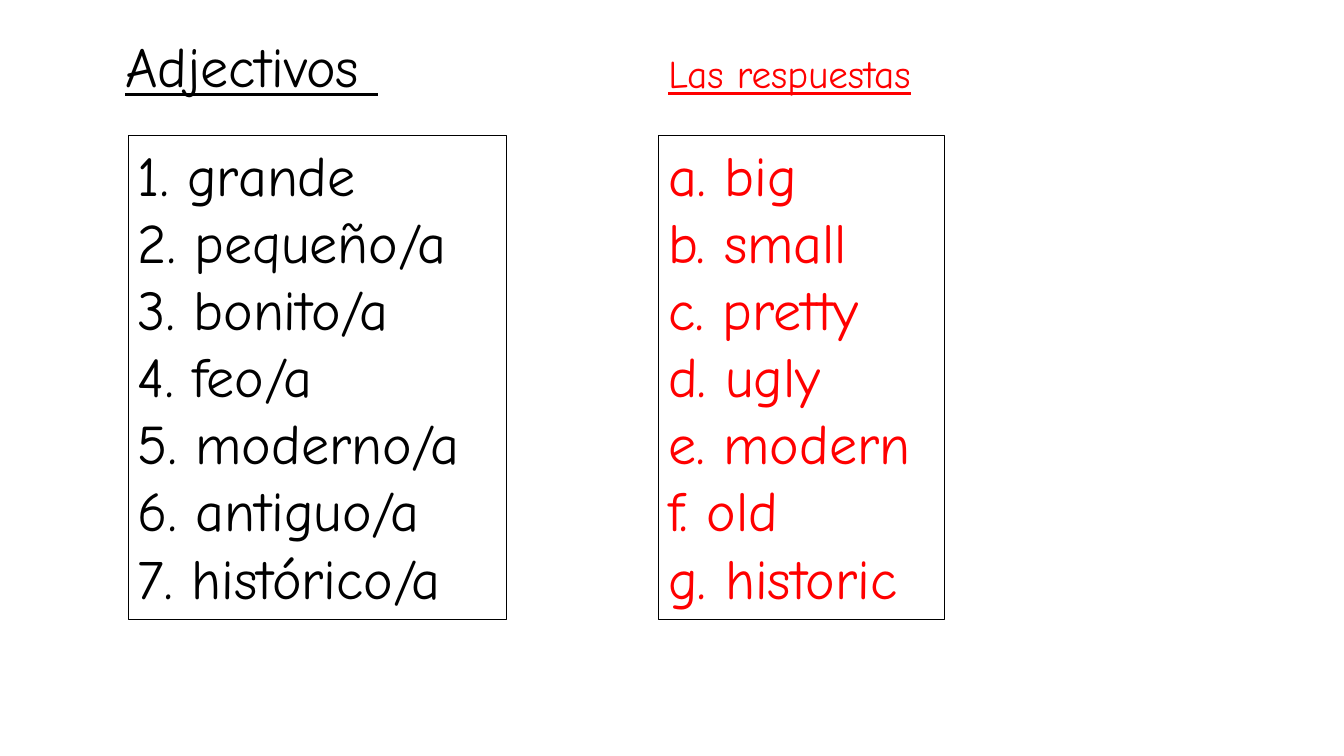
from dataclasses import dataclass

from pptx import Presentation
from pptx.dml.color import RGBColor
from pptx.enum import shapes, text
from pptx.util import Inches, Pt


@dataclass(frozen=True)
class Theme:
    font: str = "Comic Neue"
    black: RGBColor = RGBColor(0, 0, 0)
    red: RGBColor = RGBColor(255, 0, 0)
    large: Pt = Pt(40)
    small: Pt = Pt(28)
    border: Pt = Pt(0.75)


theme = Theme()


def write(sp, lines, size, color, underline=None):
    tf = sp.text_frame
    tf.text = "\n".join(lines)
    tf.word_wrap = True
    tf.auto_size = text.MSO_AUTO_SIZE.NONE
    tf.vertical_anchor = text.MSO_ANCHOR.TOP
    for p in tf.paragraphs:
        p.alignment = text.PP_ALIGN.LEFT
        for r in p.runs:
            r.font.name = theme.font
            r.font.size = size
            r.font.color.rgb = color
            r.font.underline = underline


prs = Presentation()
prs.slide_width, prs.slide_height = Inches(13.33), Inches(7.5)
s = prs.slides.add_slide(prs.slide_layouts[5])

# Headings
title = s.shapes.title
title.left, title.top = Inches(1.14), Inches(0.26)
title.width, title.height = Inches(3.19), Inches(0.77)
write(title, ["Adjectivos "], theme.large, theme.black, underline=True)

answers = s.shapes.add_textbox(Inches(6.53), Inches(0.44), Inches(2.92), Inches(0.57))
write(answers, ["Las respuestas"], theme.small, theme.red, underline=True)

# Word lists: left edge, width, colour, labels, words
word_lists = [
    (1.27, 3.75, theme.black, "1234567",
     ["grande", "pequeño/a", "bonito/a", "feo/a", "moderno/a", "antiguo/a", "histórico/a"]),
    (6.53, 2.84, theme.red, "abcdefg",
     ["big", "small", "pretty", "ugly", "modern", "old", "historic"]),
]
for left, width, color, labels, words in word_lists:
    box = s.shapes.add_shape(shapes.MSO_SHAPE.RECTANGLE,
                             Inches(left), Inches(1.34), Inches(width), Inches(4.81))
    box.shadow.inherit = False
    box.fill.background()
    box.line.color.rgb = theme.black
    box.line.width = theme.border
    lines = [f"{label}. {word}" for label, word in zip(labels, words)]
    write(box, lines, theme.large, color)

prs.save("out.pptx")
